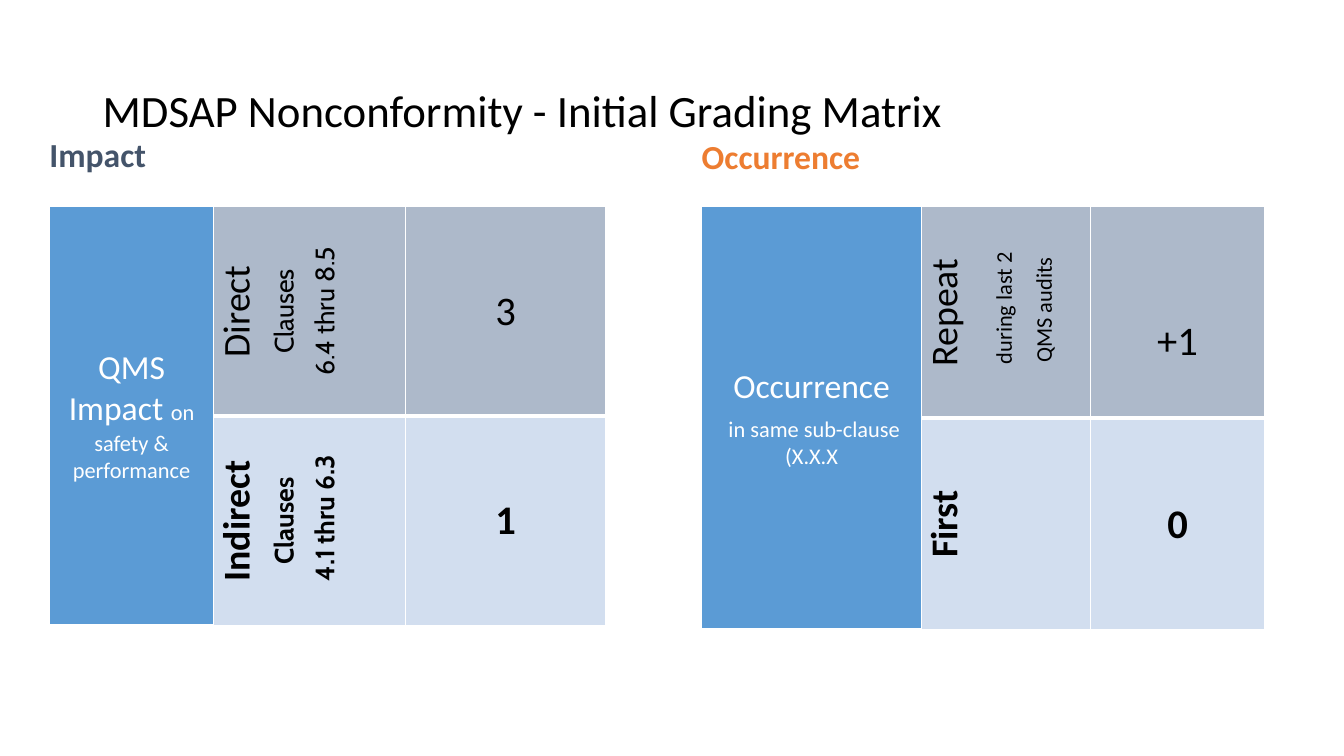
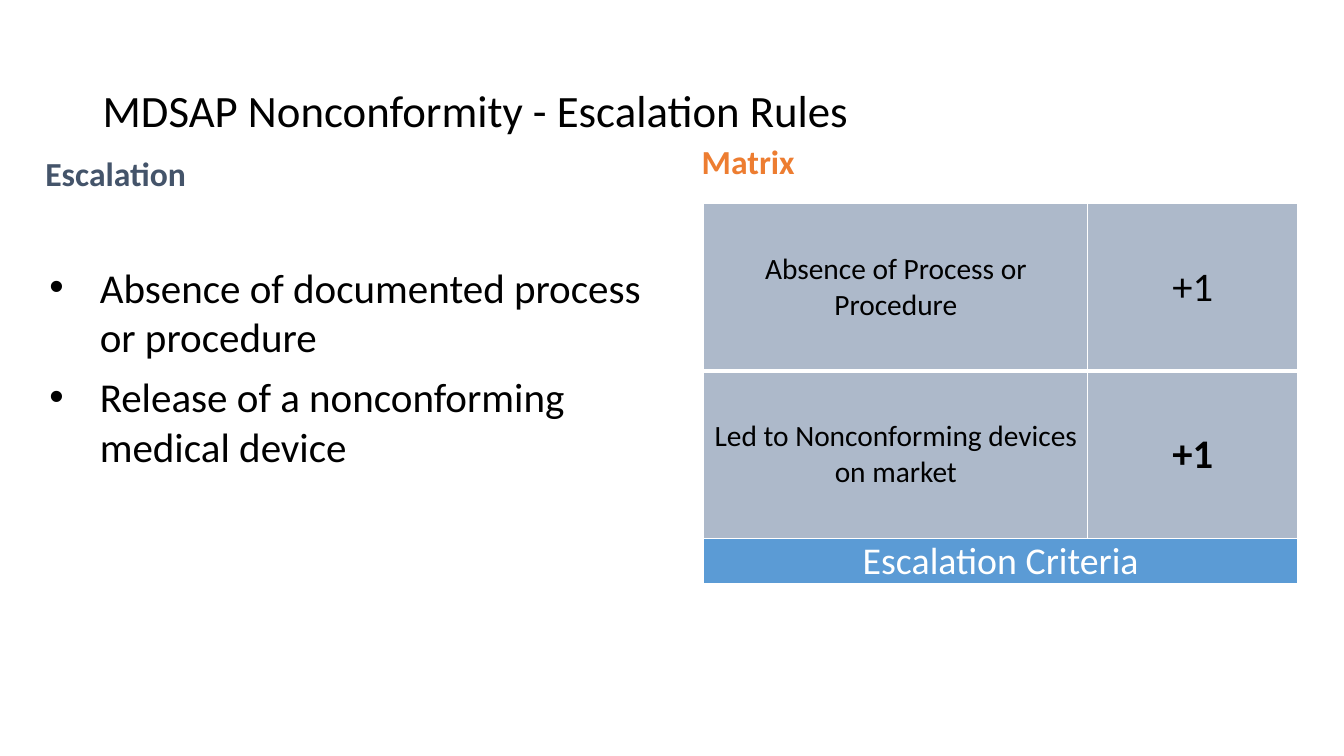
from dataclasses import dataclass

from lxml import etree
from pptx import Presentation
from pptx.dml.color import RGBColor
from pptx.enum.text import MSO_ANCHOR, PP_ALIGN
from pptx.oxml.ns import qn
from pptx.util import Emu, Pt

MIDDLE, TOP = MSO_ANCHOR.MIDDLE, MSO_ANCHOR.TOP
CENTER = PP_ALIGN.CENTER
PX = 9144


@dataclass(frozen=True)
class Theme:
    """Colours, fonts and type sizes the slides share."""
    ink: str = "000000"
    white: str = "FFFFFF"
    slate: str = "44546A"
    orange: str = "ED7D31"
    blue: str = "5B9BD5"
    grey: str = "ADB9CA"
    pale: str = "D2DEEF"
    font: str = "Calibri"
    clause_font: str = "Cabin"
    title: float = 32
    score: float = 29
    bullet: float = 29.3
    label: float = 27
    heading: float = 24
    criterion: float = 21
    clause: float = 19
    small: float = 16


THEME = Theme()


@dataclass(frozen=True)
class Span:
    """A stretch of text in one style."""
    text: str
    size: float
    bold: bool = False
    colour: str = THEME.ink
    font: str = THEME.font


@dataclass(frozen=True)
class Cell:
    """A table cell: paragraphs of spans, fill, margins, direction and merge."""
    paras: list
    fill: str
    margins: tuple = (10, 0, 10, 0)
    vertical: bool = False
    rows: int = 1
    columns: int = 1


def px(length):
    """Turn px into EMU."""
    return Emu(length * PX)


def add_span(para, span):
    """Add one styled run to a paragraph."""
    run = para.add_run()
    run.text = span.text
    run.font.name = span.font
    run.font.size = Pt(span.size)
    run.font.bold = span.bold
    run.font.color.rgb = RGBColor.from_string(span.colour)


def add_paras(frame, paras):
    """Fill a text frame with paragraphs and return them."""
    made = []
    for index, spans in enumerate(paras):
        para = frame.add_paragraph() if index else frame.paragraphs[0]
        for span in spans:
            add_span(para, span)
        made.append(para)
    return made


def add_text(page, box, paras, margins=(0, 0, 0, 0), anchor=TOP):
    """Place a wrapping text box and return its paragraphs."""
    frame = page.shapes.add_textbox(*map(px, box)).text_frame
    frame.word_wrap = True
    frame.vertical_anchor = anchor
    set_margins(frame, margins)
    return add_paras(frame, paras)


def set_margins(holder, margins):
    """Set left, top, right and bottom margins of a frame or cell."""
    sides = ("left", "top", "right", "bottom")
    for side, margin in zip(sides, margins):
        setattr(holder, f"margin_{side}", px(margin))


def add_title(page, text):
    """Place the slide title."""
    para, = add_text(page, (92, 40, 1150, 145), [[Span(text, THEME.title)]],
                     (10, 5, 10, 5), MIDDLE)
    para.line_spacing = 0.9


def add_heading(page, left, top, text, colour):
    """Place a bold column heading."""
    span = Span(text, THEME.heading, True, colour)
    para, = add_text(page, (left, top, 588, 50), [[span]])
    para.line_spacing = 0.9


def add_bullets(page, box, texts):
    """Place a bulleted list with a hanging indent."""
    paras = add_text(page, box, [[Span(text, THEME.bullet)] for text in texts])
    for index, para in enumerate(paras):
        para.space_before = Pt(8 if index else 0)
        props = para._p.get_or_add_pPr()
        props.set("marL", str(px(50)))
        props.set("indent", str(px(-50)))
        etree.SubElement(props, qn("a:buFont"), typeface="Arial")
        etree.SubElement(props, qn("a:buChar"), char="•")


def set_borders(cell, bottom):
    """Draw white borders, with the given width in points at the bottom."""
    props = cell._tc.get_or_add_tcPr()
    for side, width in (("L", 1), ("R", 1), ("T", 1), ("B", bottom)):
        line = etree.SubElement(props, qn(f"a:ln{side}"), w=str(Pt(width)))
        fill = etree.SubElement(line, qn("a:solidFill"))
        etree.SubElement(fill, qn("a:srgbClr"), val=THEME.white)


def fill_cell(cell, content):
    """Colour a cell and set its text."""
    cell.fill.solid()
    cell.fill.fore_color.rgb = RGBColor.from_string(content.fill)
    cell.vertical_anchor = MIDDLE
    set_margins(cell, content.margins)
    if content.vertical:
        cell._tc.get_or_add_tcPr().set("vert", "vert270")
    for para in add_paras(cell.text_frame, content.paras):
        para.alignment = CENTER
        para.space_after = Pt(6)


def add_grid(page, left, top, widths, heights, rows):
    """Place a table; None marks a cell covered by a merge."""
    table = page.shapes.add_table(
        len(heights), len(widths), px(left), px(top),
        px(sum(widths)), px(sum(heights))).table
    table.first_row = table.horz_banding = False
    for column, width in zip(table.columns, widths):
        column.width = px(width)
    for row, height in zip(table.rows, heights):
        row.height = px(height)
    for r, row in enumerate(rows):
        for c, content in enumerate(row):
            cell = table.cell(r, c)
            set_borders(cell, 1 if r else 3)
            if content is None:
                continue
            if content.rows * content.columns > 1:
                cell.merge(table.cell(r + content.rows - 1,
                                      c + content.columns - 1))
            fill_cell(cell, content)


def score(text, fill, bold=False, top=0):
    """Make a cell with a large score."""
    return Cell([[Span(text, THEME.score, bold)]], fill, (10, top, 10, 0))


def grade(label, fill, bold=False, notes=()):
    """Make a rotated cell with a label above its notes."""
    return Cell([[Span(label, THEME.label, bold)], *notes], fill, vertical=True)


def clauses(numbers, bold=False):
    """Make the two note lines that name the clauses."""
    return [[Span(text, THEME.clause, bold, font=THEME.clause_font)]
            for text in ("Clauses", numbers)]


def criterion(text):
    """Make a cell that names an escalation criterion."""
    return Cell([[Span(text, THEME.criterion)]], THEME.grey)


def build_grading(page):
    """Build the grading slide with its impact and occurrence matrices."""
    add_title(page, "MDSAP Nonconformity - Initial Grading Matrix")
    add_heading(page, 49, 137, "Impact", THEME.slate)
    add_heading(page, 696, 139, "Occurrence", THEME.orange)
    impact = Cell([[Span("QMS Impact ", THEME.heading, colour=THEME.white),
                    Span("on safety & performance", THEME.small,
                         colour=THEME.white)]], THEME.blue, rows=2)
    add_grid(page, 49, 205, (163, 190, 199), (208, 208), [
        [impact, grade("Direct", THEME.grey, notes=clauses("6.4 thru 8.5")),
         score("3", THEME.grey)],
        [None, grade("Indirect", THEME.pale, True,
                     clauses(" 4.1 thru 6.3", True)),
         score("1", THEME.pale, True)]])
    occurrence = Cell(
        [[Span("Occurrence", THEME.heading, colour=THEME.white)],
         [Span(" in same sub-clause (X.X.X", THEME.small,
               colour=THEME.white)]],
        THEME.blue, (13, 7, 13, 7), rows=2)
    audits = [[Span(" ", THEME.label), Span("during last 2", THEME.small)],
              [Span(" QMS audits", THEME.small)]]
    add_grid(page, 696, 205, (218, 168, 172), (210, 210), [
        [occurrence, grade("Repeat", THEME.grey, notes=audits),
         score("+1", THEME.grey, top=57)],
        [None, grade("First", THEME.pale, True),
         score("0", THEME.pale, True)]])


def build_escalation(page):
    """Build the escalation slide with its rules and matrix."""
    add_title(page, "MDSAP Nonconformity - Escalation Rules")
    add_heading(page, 45, 156, "Escalation", THEME.slate)
    add_heading(page, 696, 144, "Matrix", THEME.orange)
    add_bullets(page, (49, 260, 588, 308), [
        "Absence of documented process or procedure",
        "Release of a nonconforming medical device"])
    footer = Cell([[Span("Escalation Criteria", THEME.label,
                         colour=THEME.white)]], THEME.blue, columns=2)
    add_grid(page, 698, 202, (381, 208), (166, 166, 44), [
        [criterion("Absence of Process or Procedure"),
         score("+1", THEME.grey)],
        [criterion("Led to Nonconforming devices on market"),
         score("+1", THEME.grey, True)],
        [footer, None]])


def main():
    """Build the deck and save it."""
    deck = Presentation()
    deck.slide_width, deck.slide_height = px(1333), px(750)
    for build in (build_grading, build_escalation):
        build(deck.slides.add_slide(deck.slide_layouts[6]))
    deck.save("out.pptx")


if __name__ == "__main__":
    main()
